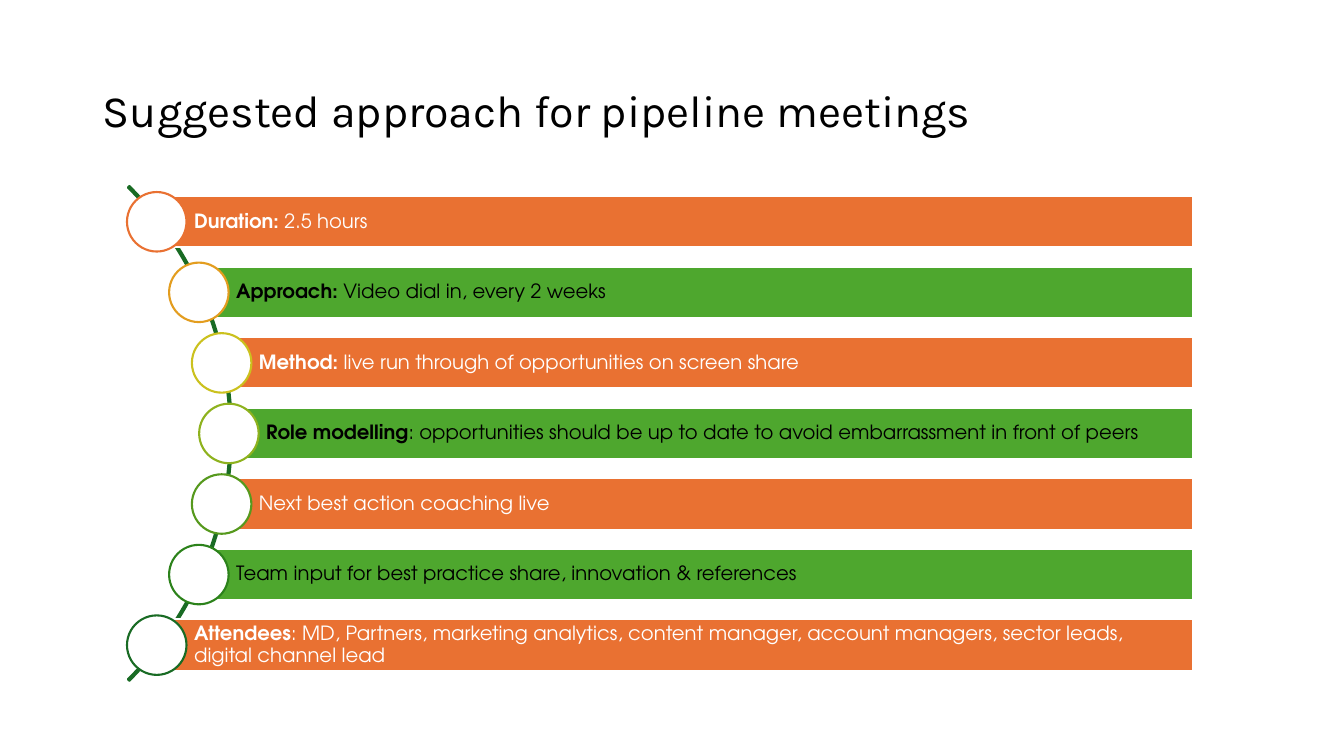
import math

from pptx import Presentation
from pptx import util as u
from pptx.dml.color import RGBColor
from pptx.enum import shapes, text

TITLE = "Suggested approach for pipeline meetings"
# Bold lead, regular text, ring colour
STEPS = [
    ("Duration: ", "2.5 hours", "E97132"),
    ("Approach: ", "Video dial in, every 2 weeks", "E39D1F"),
    ("Method: ", "live run through of opportunities on screen share", "CBC11E"),
    ("Role modelling", ": opportunities should be up to date to avoid "
     "embarrassment in front of peers", "8EB21E"),
    ("", "Next best action coaching live", "56991D"),
    ("", "Team input for best practice share, innovation & references", "2C821B"),
    ("Attendees", ": MD, Partners, marketing analytics, content manager, "
     "account managers, sector leads, \ndigital channel lead", "196B24"),
]
BAR_STYLES = [("E97132", "FFFFFF"), ("4EA72E", "000000")]  # fill, text
WHITE, BLACK, ARC_GREEN = "FFFFFF", "000000", "196B24"
TITLE_FONT, BODY_FONT = "Karla", "TeX Gyre Adventor"

ARC_X, ARC_Y, ARC_SIZE = -1.17, 4.3, 6.94
CENTRE_RADIUS = 3.44  # circle centres lie on this radius
ROW_PITCH, BAR_HEIGHT, BAR_RIGHT, CIRCLE = 0.7, 0.51, 11.83, 0.59


def rgb(colour):
    return RGBColor.from_string(colour)


def add_outlined(slide, kind, left, top, width, height, fill, line):
    shape = slide.shapes.add_shape(
        kind, u.Inches(left), u.Inches(top), u.Inches(width), u.Inches(height))
    shape.shadow.inherit = False
    if fill:
        shape.fill.solid()
        shape.fill.fore_color.rgb = rgb(fill)
    else:
        shape.fill.background()
    shape.line.color.rgb = rgb(line)
    shape.line.width = u.Pt(1.5)
    return shape


def add_run(paragraph, words, font, size, colour, bold=False):
    run = paragraph.add_run()
    run.text = words
    run.font.name = font
    run.font.size = u.Pt(size)
    run.font.bold = bold
    run.font.color.rgb = rgb(colour)


def start_paragraph(frame):
    """Format the frame and its first paragraph as left-aligned, middle text."""
    frame.word_wrap = True
    frame.auto_size = text.MSO_AUTO_SIZE.NONE
    frame.vertical_anchor = text.MSO_ANCHOR.MIDDLE
    paragraph = frame.paragraphs[0]
    paragraph.alignment = text.PP_ALIGN.LEFT
    paragraph.line_spacing = 0.9
    return paragraph


def add_title(slide):
    title = slide.shapes.title
    title.left, title.top = u.Inches(0.92), u.Inches(0.4)
    title.width, title.height = u.Inches(11.5), u.Inches(1.45)
    add_run(start_paragraph(title.text_frame), TITLE, TITLE_FONT, 32, BLACK)


def add_arc(slide):
    arc = add_outlined(slide, shapes.MSO_SHAPE.BLOCK_ARC,
                       ARC_X - ARC_SIZE / 2, ARC_Y - ARC_SIZE / 2,
                       ARC_SIZE, ARC_SIZE, None, ARC_GREEN)
    for index, value in enumerate((189, 27, 0.003)):
        arc.adjustments[index] = value


def add_step(slide, index, lead, words, ring):
    offset = (index - (len(STEPS) - 1) / 2) * ROW_PITCH
    x = ARC_X + math.sqrt(CENTRE_RADIUS ** 2 - offset ** 2)
    y = ARC_Y + offset
    fill, colour = BAR_STYLES[index % 2]

    bar = add_outlined(slide, shapes.MSO_SHAPE.RECTANGLE, x, y - BAR_HEIGHT / 2,
                       BAR_RIGHT - x, BAR_HEIGHT, fill, WHITE)
    frame = bar.text_frame
    frame.margin_left = u.Inches(0.37)
    frame.margin_top = frame.margin_right = frame.margin_bottom = u.Inches(0.04)
    paragraph = start_paragraph(frame)
    if lead:
        add_run(paragraph, lead, BODY_FONT, 14, colour, bold=True)
    for number, line in enumerate(words.split("\n")):
        if number:
            paragraph.add_line_break()
        add_run(paragraph, line, BODY_FONT, 14, colour)

    add_outlined(slide, shapes.MSO_SHAPE.OVAL, x - CIRCLE / 2, y - CIRCLE / 2,
                 CIRCLE, CIRCLE, WHITE, ring)


def main():
    presentation = Presentation()
    presentation.slide_width = u.Inches(13.33)
    presentation.slide_height = u.Inches(7.5)
    slide = presentation.slides.add_slide(presentation.slide_layouts[5])
    add_title(slide)
    add_arc(slide)
    for index, step in enumerate(STEPS):
        add_step(slide, index, *step)
    presentation.save("out.pptx")


if __name__ == "__main__":
    main()
